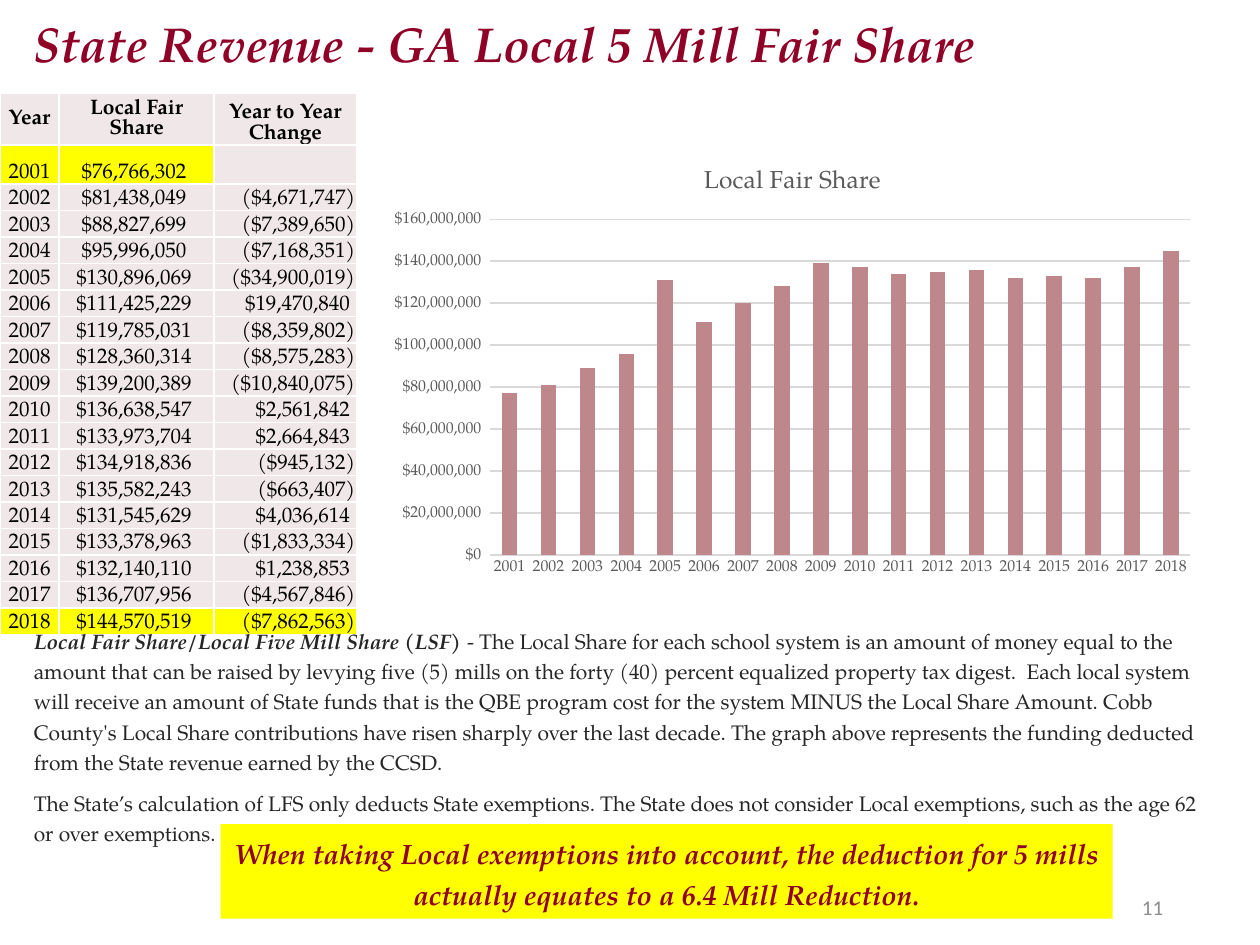
from lxml.etree import SubElement
from pptx import Presentation
from pptx.chart.data import CategoryChartData
from pptx.dml.color import RGBColor
from pptx.enum.chart import XL_CHART_TYPE, XL_TICK_MARK
from pptx.enum.shapes import MSO_SHAPE
from pptx.enum.text import MSO_ANCHOR, PP_ALIGN
from pptx.oxml.ns import qn
from pptx.util import Inches, Pt

SERIF = "TeX Gyre Pagella"
CRIMSON, YELLOW, BLUSH = "8F0127", "FFFF00", "F0E7E8"
SHARES = {
    2001: 76766302, 2002: 81438049, 2003: 88827699, 2004: 95996050,
    2005: 130896069, 2006: 111425229, 2007: 119785031, 2008: 128360314,
    2009: 139200389, 2010: 136638547, 2011: 133973704, 2012: 134918836,
    2013: 135582243, 2014: 131545629, 2015: 133378963, 2016: 132140110,
    2017: 136707956, 2018: 144570519,
}
DEFINITION = (
    "- The Local Share for each school system is an amount of money equal to the amount "
    "that can be raised by levying five (5) mills on the forty (40) percent equalized "
    "property tax digest.  Each local system will receive an amount of State funds that is "
    "the QBE program cost for the system MINUS the Local Share Amount. Cobb County's Local "
    "Share contributions have risen sharply over the last decade. The graph above represents "
    "the funding deducted from the State revenue earned by the CCSD."
)
EXEMPTIONS = (
    "The State’s calculation of LFS only deducts State exemptions. The State does not "
    "consider Local exemptions, such as the age 62 or over exemptions."
)
CALLOUT = (
    "When taking Local exemptions into account, the deduction for 5 mills actually equates "
    "to a 6.4 Mill Reduction."
)


def color(value):
    return RGBColor.from_string(value)


def style(font, size, hue, bold=False, italic=False, name=SERIF):
    font.name, font.size, font.bold, font.italic = name, Pt(size), bold, italic
    font.color.rgb = color(hue)


def add_text(paragraph, words, *look, **options):
    run = paragraph.add_run()
    run.text = words
    style(run.font, *look, **options)


def text_frame(slide, left, top, width, height):
    box = slide.shapes.add_textbox(Inches(left), Inches(top), Inches(width), Inches(height))
    box.text_frame.word_wrap = True
    return box.text_frame


def add_title(slide, left, top, width, height):
    title = text_frame(slide, left, top, width, height)
    add_text(title.paragraphs[0], "State Revenue - GA Local 5 Mill Fair Share", 28, CRIMSON, True, True)


def add_page_number(slide, left, top, width, height):
    number = text_frame(slide, left, top, width, height)
    number.vertical_anchor = MSO_ANCHOR.MIDDLE
    number.paragraphs[0].alignment = PP_ALIGN.RIGHT
    add_text(number.paragraphs[0], "11", 12, "8C8C8C", name="Calibri")


def dollars(amount):
    return f"(${-amount:,})" if amount < 0 else f"${amount:,} "


def share_rows():
    rows = [("Year", "Local Fair Share", "Year to Year Change")]
    previous = None
    for year, share in SHARES.items():
        change = dollars(previous - share) if previous else ""
        rows.append((str(year), dollars(share), change))
        previous = share
    return rows


def add_borders(cell):
    properties = cell._tc.get_or_add_tcPr()
    for side in ("lnL", "lnR", "lnT", "lnB"):
        line = SubElement(properties, qn(f"a:{side}"), w=str(Pt(1)))
        SubElement(SubElement(line, qn("a:solidFill")), qn("a:srgbClr"), val="FFFFFF")


def fill_cell(cell, words, header, right, fill):
    add_borders(cell)
    cell.fill.solid()
    cell.fill.fore_color.rgb = color(fill)
    cell.margin_left = cell.margin_right = cell.margin_top = Inches(0.01)
    cell.margin_bottom = 0
    cell.vertical_anchor = MSO_ANCHOR.MIDDLE if header and not right else MSO_ANCHOR.BOTTOM
    paragraph = cell.text_frame.paragraphs[0]
    paragraph.alignment = PP_ALIGN.RIGHT if right and not header else PP_ALIGN.CENTER
    add_text(paragraph, words, 12, "000000", header)


def add_share_table(slide, left, top, width, height):
    rows = share_rows()
    table = slide.shapes.add_table(
        len(rows), 3, Inches(left), Inches(top), Inches(width), Inches(height)
    ).table
    table.first_row = table.horz_banding = False
    for column, column_width in zip(table.columns, (0.47, 1.23, 1.13)):
        column.width = Inches(column_width)
    for r, row in enumerate(rows):
        table.rows[r].height = Inches(0.19 if r else 0.38)
        for c, words in enumerate(row):
            marked = r in (1, len(rows) - 1) and words
            fill_cell(table.cell(r, c), words, r == 0, c == 2, YELLOW if marked else BLUSH)


def add_share_chart(slide, left, top, width, height):
    data = CategoryChartData()
    data.categories = [str(year) for year in SHARES]
    data.add_series("Local Fair Share", [round(share, -6) for share in SHARES.values()])
    chart = slide.shapes.add_chart(
        XL_CHART_TYPE.COLUMN_CLUSTERED,
        Inches(left), Inches(top), Inches(width), Inches(height), data,
    ).chart
    style(chart.font, 10, "000000", name="Calibri")
    chart.has_legend = False
    chart.has_title = True
    heading = chart.chart_title.text_frame
    heading.text = "Local Fair Share"
    style(heading.paragraphs[0].runs[0].font, 14, "595959")
    for axis in (chart.category_axis, chart.value_axis):
        axis.major_tick_mark = axis.minor_tick_mark = XL_TICK_MARK.NONE
        axis.format.line.fill.background()
        style(axis.tick_labels.font, 9, "595959")
    amounts = chart.value_axis
    amounts.minimum_scale, amounts.maximum_scale, amounts.major_unit = 0, 160000000, 20000000
    amounts.tick_labels.number_format = '"$"#,##0_);[Red]\\("$"#,##0\\)'
    amounts.tick_labels.number_format_is_linked = False
    amounts.major_gridlines.format.line.width = Pt(0.75)
    amounts.major_gridlines.format.line.color.rgb = color("D9D9D9")
    plot = chart.plots[0]
    plot.gap_width = 150
    plot.vary_by_categories = False
    bars = plot.series[0].format.fill
    bars.solid()
    bars.fore_color.rgb = color("BD878C")


def add_explanation(slide, left, top, width, height):
    explanation = text_frame(slide, left, top, width, height)
    definition = explanation.paragraphs[0]
    add_text(definition, "Local Fair Share/Local Five Mill Share (LSF) ", 12, "262626", True, True)
    add_text(definition, DEFINITION, 12, "262626")
    exemptions = explanation.add_paragraph()
    exemptions.space_before = Pt(6)
    add_text(exemptions, EXEMPTIONS, 12, "262626")
    definition.line_spacing = exemptions.line_spacing = 1.2


def add_callout(slide, left, top, width, height):
    callout = slide.shapes.add_shape(
        MSO_SHAPE.RECTANGLE, Inches(left), Inches(top), Inches(width), Inches(height)
    )
    callout.shadow.inherit = False
    callout.fill.solid()
    callout.fill.fore_color.rgb = color(YELLOW)
    callout.line.fill.background()
    callout.text_frame.word_wrap = True
    callout.text_frame.vertical_anchor = MSO_ANCHOR.TOP
    message = callout.text_frame.paragraphs[0]
    message.alignment = PP_ALIGN.CENTER
    message.line_spacing = 1.2
    add_text(message, CALLOUT, 16, CRIMSON, True, True)


def main():
    deck = Presentation()
    deck.slide_width, deck.slide_height = Inches(10), Inches(7.5)
    slide = deck.slides.add_slide(deck.slide_layouts[6])
    add_page_number(slide, 8.83, 7, 0.5, 0.4)
    add_title(slide, 0.17, 0.06, 8.5, 1.35)
    add_share_table(slide, 0, 0.74, 2.83, 4.16)
    add_share_chart(slide, 3, 1.17, 6.58, 3.47)
    add_explanation(slide, 0.17, 4.9, 9.5, 1.87)
    add_callout(slide, 1.75, 6.54, 7.08, 0.75)
    deck.save("out.pptx")


if __name__ == "__main__":
    main()
